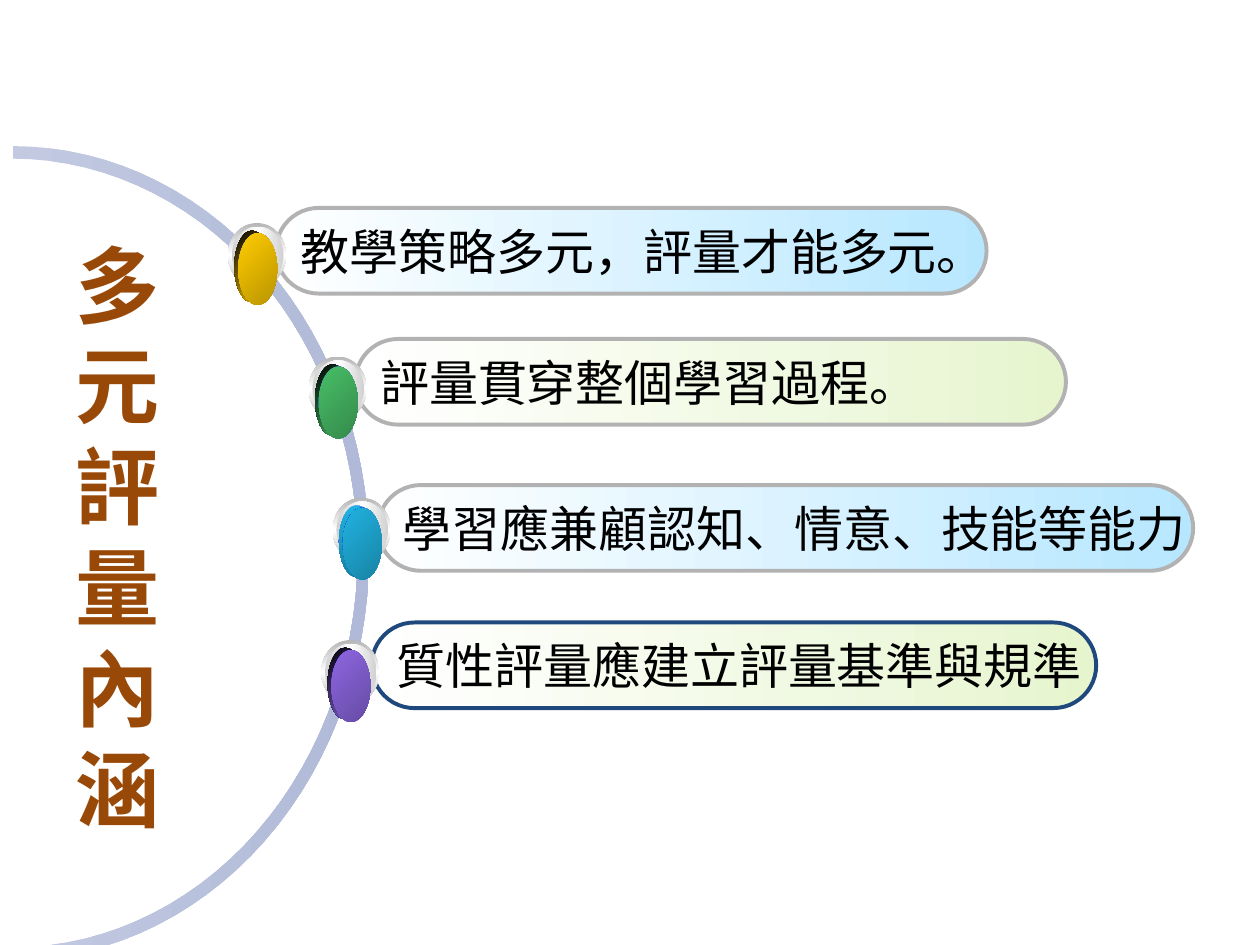
from copy import deepcopy
from dataclasses import dataclass
from math import cos, pi, sin
from pptx import Presentation
from pptx.dml.color import RGBColor as RGB
from pptx.enum.shapes import MSO_SHAPE as Shape
from pptx.enum.text import MSO_ANCHOR as Anchor, MSO_AUTO_SIZE as Fit, PP_ALIGN as Align
from pptx.oxml.ns import qn
from pptx.util import Inches, Pt


@dataclass(frozen=True)
class Theme:
    font: str = "Noto Sans CJK SC"
    head: str = "984807"
    ink: str = "000000"
    head_pt: int = 48
    lead_pt: float = 57.6
    body_pt: int = 28
    edge_pt: float = 2.25
    arc: tuple = ("C2C9E1", "B0BAD8")
    sky: tuple = ("FFFFFF", "B7E7FF")
    lime: tuple = ("FFFFFF", "E7F5CF")
    gray: str = "B2B2B2"
    navy: str = "1F497D"
    rim: tuple = ("B6B6B6", "FFFFFF", "B6B6B6")
    dish: tuple = ("D1D1D1", "FFFFFF", "D1D1D1")
    glow: tuple = ("FFFFFF", "0000FF", "FFFFFF")
    blue: tuple = ("0000C3", "0000FF", "0000C3")
    gold: tuple = ("FFCC00", "BA9500")
    green: tuple = ("48BE67", "358B4B")
    cyan: tuple = ("21B3E1", "1883A4")
    plum: tuple = ("8D67E1", "674BA4")


theme = Theme()


def paint(shape, colors, angle=0):
    """Fill with evenly spaced colours; the angle runs clockwise."""
    shape.shadow.inherit = False
    shape.line.fill.background()
    fill = shape.fill
    fill.gradient()
    fill.gradient_angle = -angle % 360
    stops = shape.element.spPr.find(qn("a:gradFill")).find(qn("a:gsLst"))
    while len(stops) < len(colors):
        stops.append(deepcopy(stops[0]))
    for i, (stop, color) in enumerate(zip(fill.gradient_stops, colors)):
        stop.color.rgb = RGB.from_string(color)
        stop.position = i / (len(colors) - 1)


def write(frame, text, size, color, bold=False):
    """Add one left-aligned run, with its East Asian font."""
    par = frame.paragraphs[0]
    par.alignment = Align.LEFT
    run = par.add_run()
    run.text = text
    font = run.font
    font.name, font.size, font.bold = theme.font, Pt(size), bold
    font.color.rgb = RGB.from_string(color)
    props = run._r.get_or_add_rPr()
    east = props.makeelement(qn("a:ea"), {"typeface": theme.font})
    props.find(qn("a:latin")).addnext(east)
    return par


deck = Presentation()
deck.slide_width, deck.slide_height = Inches(10), Inches(7.5)
slide = deck.slides.add_slide(deck.slide_layouts[5])
shapes = slide.shapes

# Title, one character to a line
title = shapes.title
title.left, title.top = Inches(0.5), Inches(1.8)
title.width, title.height = Inches(0.92), Inches(5.69)
frame = title.text_frame
frame.word_wrap = True
frame.auto_size = Fit.NONE
frame.vertical_anchor = Anchor.TOP
par = write(frame, "多元評量內涵", theme.head_pt, theme.head, bold=True)
par.line_spacing = Pt(theme.lead_pt)

# Half ring: outer edge down, inner edge back up
steps = 60
turns = [pi * i / steps - pi / 2 for i in range(steps + 1)]
ring = [(0.1 + 2.83 * cos(t), 4.39 + 3.23 * sin(t)) for t in turns]
ring += [(0.1 + 2.74 * cos(t), 4.39 + 3.13 * sin(t)) for t in reversed(turns)]
points = [(Inches(x), Inches(y)) for x, y in ring]
draft = shapes.build_freeform(*points[0])
draft.add_line_segments(points[1:])
paint(draft.convert_to_shape(), theme.arc)

# Rows: text, pill (left, top, width, fill, edge), ball (left, top, colours, shade angle)
rows = [
    ("教學策略多元，評量才能多元。", 2.19, 1.65, 5.64, theme.sky, theme.gray,
     1.81, 1.77, theme.gold, 45),
    ("評量貫穿整個學習過程。", 2.82, 2.69, 5.64, theme.lime, theme.gray,
     2.45, 2.83, theme.green, 45),
    ("學習應兼顧認知、情意、技能等能力", 3, 3.85, 6.47, theme.sky, theme.gray,
     2.64, 3.95, theme.cyan, 90),
    ("質性評量應建立評量基準與規準", 2.95, 4.94, 5.75, theme.lime, theme.navy,
     2.55, 5.08, theme.plum, 45),
]
for text, left, top, width, fill, edge, x, y, tint, angle in rows:
    # Pill
    pill = shapes.add_shape(Shape.ROUNDED_RECTANGLE, Inches(left), Inches(top),
                            Inches(width), Inches(0.68))
    pill.adjustments[0] = 0.5
    paint(pill, fill)
    pill.line.color.rgb = RGB.from_string(edge)
    pill.line.width = Pt(theme.edge_pt)
    frame = pill.text_frame
    frame.word_wrap = False
    frame.vertical_anchor = Anchor.MIDDLE
    write(frame, text, theme.body_pt, theme.ink)

    # Ball, from the rim inwards
    shade = (theme.ink, "1880A1" if angle == 90 else tint[0])
    if angle == 90:
        shade = (tint[0], "1880A1")
    layers = [
        (0, 0, 0.46, 0.51, theme.rim, 90),
        (0.03, 0.03, 0.41, 0.45, theme.dish, 0),
        (0.05, 0.06, 0.28, 0.57, theme.glow, 45),
        (0.05, 0.06, 0.28, 0.57, shade, angle),
        (0.08, 0.08, 0.31, 0.57, theme.blue, 315),
        (0.08, 0.08, 0.31, 0.57, tint, 45),
    ]
    for dx, dy, wide, high, colors, slant in layers:
        oval = shapes.add_shape(Shape.OVAL, Inches(x + dx), Inches(y + dy),
                                Inches(wide), Inches(high))
        paint(oval, colors, slant)

deck.save("out.pptx")
